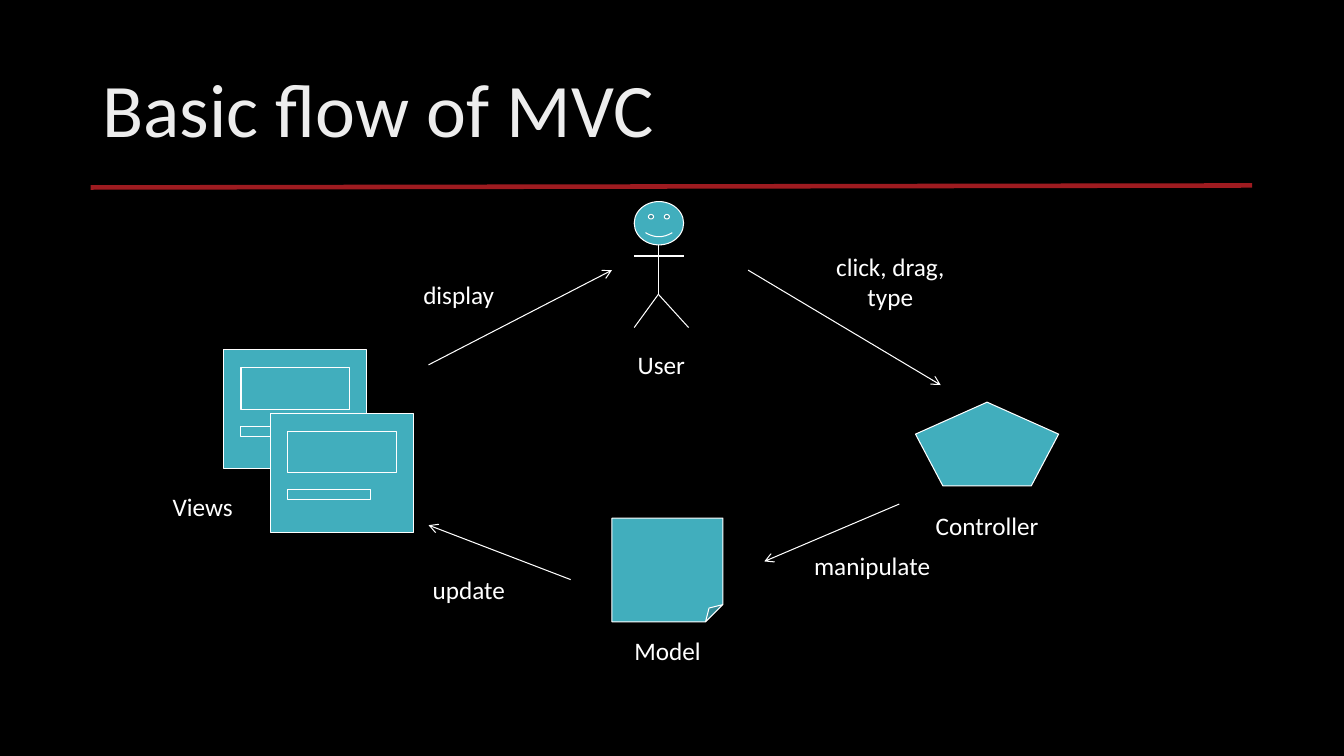
from pptx import Presentation
from pptx.dml.color import RGBColor
from pptx.enum.shapes import MSO_CONNECTOR, MSO_SHAPE as Preset
from pptx.enum.text import MSO_ANCHOR, MSO_AUTO_SIZE, PP_ALIGN
from pptx.oxml.ns import qn
from pptx.util import Inches, Pt
from lxml.etree import SubElement

# Content: places are left, top, width, height in inches
TITLE = ("Basic flow of MVC", (0.92, 0.4, 11.5, 1.45))
RULE = ((0.9, 1.86), (12.42, 1.84))
BLACK, WHITE, TEAL, RED, PALE = "000000", "FFFFFF", "41AEBD", "9E1B20", "EDEDED"

LABELS = [
    ("User", (5.31, 3.42, 2.5, 0.4)),
    ("Views", (1.05, 4.83, 1.92, 0.4)),
    ("Controller", (8.83, 5.01, 1.92, 0.4)),
    ("Model", (5.66, 6.25, 1.92, 0.4)),
    ("click, drag, type", (8.12, 2.44, 1.42, 0.71)),
    ("manipulate", (7.81, 5.41, 1.68, 0.4)),
    ("update", (3.81, 5.65, 1.68, 0.4)),
    ("display", (3.71, 2.72, 1.68, 0.4)),
]
FLOWS = [
    ((7.42, 2.68), (9.33, 3.82)),  # user to controller
    ((8.92, 5.0), (7.58, 5.57)),   # controller to model
    ((5.66, 5.75), (4.25, 5.21)),  # model to views
    ((4.25, 3.62), (6.07, 2.68)),  # views to user
]
NECK, HIP = (6.53, 2.43), (6.53, 2.92)
USER_HEAD = (6.29, 2, 0.49, 0.43)
USER_LIMBS = [
    (NECK, HIP),
    (HIP, (6.29, 3.25)),
    (HIP, (6.83, 3.25)),
    ((6.29, 2.54), (6.78, 2.54)),
]
CONTROLLER = (9.08, 3.99, 1.42, 0.83)
MODEL = (6.07, 5.14, 1.1, 1.03)
VIEW_ORIGINS = [(2.22, 3.47), (2.68, 4.1)]
VIEW_PARTS = [  # offsets from the view's corner, then size
    (0, 0, 1.42, 1.18),
    (0.17, 0.18, 1.08, 0.41),
    (0.17, 0.76, 0.83, 0.1),
]

prs = Presentation()
prs.slide_width, prs.slide_height = Inches(13.33), Inches(7.5)
slide = prs.slides.add_slide(prs.slide_layouts[6])


def paint(target, color):
    target.solid()
    target.fore_color.rgb = RGBColor.from_string(color)


def add_line(start, end, color=WHITE, width=0.75, arrow=False):
    points = [Inches(v) for v in (*start, *end)]
    line = slide.shapes.add_connector(MSO_CONNECTOR.STRAIGHT, *points)
    paint(line.line.fill, color)
    line.line.width = Pt(width)
    props = line._element.spPr
    if arrow:
        SubElement(props.find(qn("a:ln")), qn("a:tailEnd"), type="arrow")
    SubElement(props, qn("a:effectLst"))


def add_part(preset, place):
    part = slide.shapes.add_shape(preset, *map(Inches, place))
    part.shadow.inherit = False
    paint(part.fill, TEAL)
    paint(part.line.fill, WHITE)
    part.line.width = Pt(0.75)


def add_text(text, place, size, color, frame_format, paragraph_format):
    frame = slide.shapes.add_textbox(*map(Inches, place)).text_frame
    paragraph = frame.paragraphs[0]
    run = paragraph.add_run()
    run.text = text
    for target, values in (
        (frame, {"word_wrap": True, **frame_format}),
        (paragraph, paragraph_format),
        (run.font, {"name": "Calibri", "size": Pt(size)}),
    ):
        for key, value in values.items():
            setattr(target, key, value)
    paint(run.font.fill, color)


# Background, title and rule
paint(slide.background.fill, BLACK)
add_line(*RULE, color=RED, width=3.25)
add_text(*TITLE, 54, PALE, {"vertical_anchor": MSO_ANCHOR.MIDDLE}, {"line_spacing": 0.9})

# User
add_part(Preset.SMILEY_FACE, USER_HEAD)
for limb in USER_LIMBS:
    add_line(*limb)

# Views, the second overlapping the first
for x, y in VIEW_ORIGINS:
    for dx, dy, width, height in VIEW_PARTS:
        add_part(Preset.RECTANGLE, (x + dx, y + dy, width, height))

# Controller and model
add_part(Preset.REGULAR_PENTAGON, CONTROLLER)
add_part(Preset.FOLDED_CORNER, MODEL)

# Flow arrows and labels
for flow in FLOWS:
    add_line(*flow, arrow=True)
for text, place in LABELS:
    add_text(text, place, 18, WHITE, {"auto_size": MSO_AUTO_SIZE.SHAPE_TO_FIT_TEXT},
             {"alignment": PP_ALIGN.CENTER})

prs.save("out.pptx")
